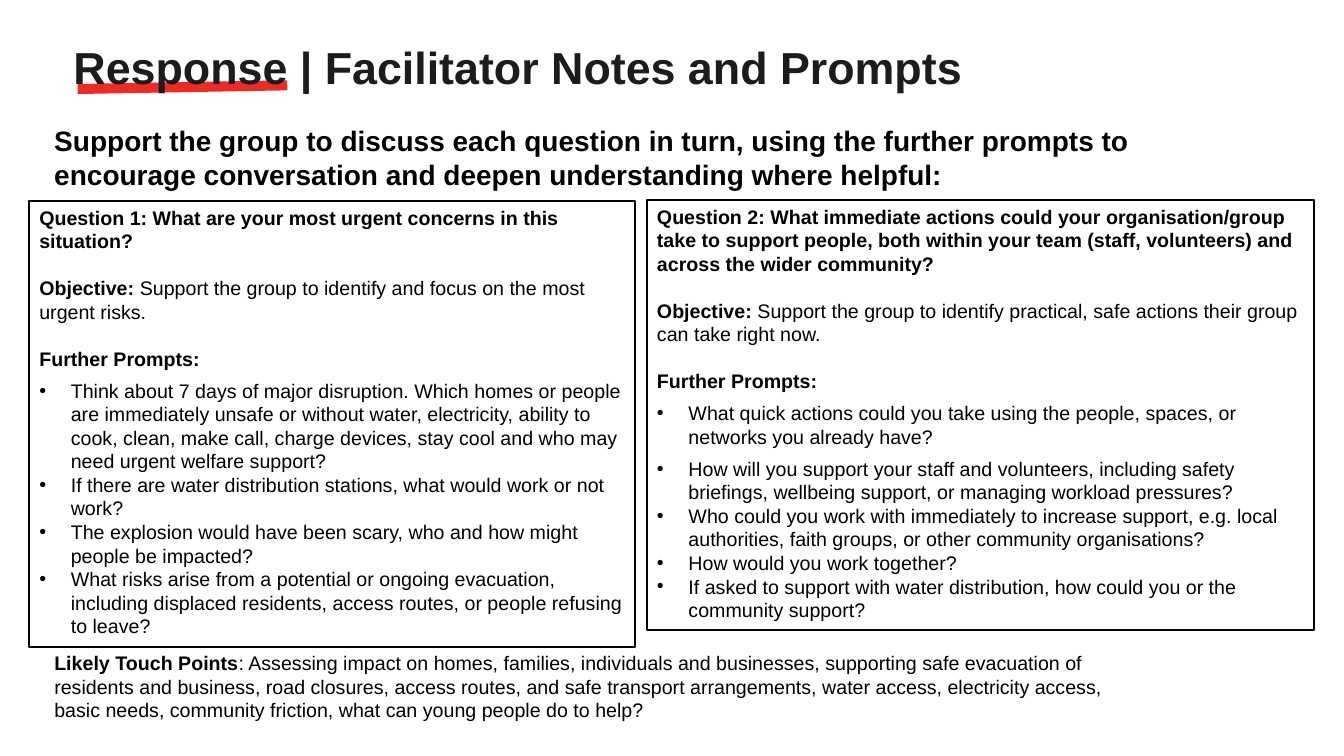
"""Build the Response facilitator notes slide."""
from lxml import etree
from pptx import Presentation
from pptx.dml.color import RGBColor
from pptx.enum.shapes import MSO_SHAPE
from pptx.enum.text import MSO_ANCHOR, PP_ALIGN
from pptx.oxml.ns import qn
from pptx.util import Pt

RECTANGLE = MSO_SHAPE.RECTANGLE
TOP = MSO_ANCHOR.TOP
LEFT = PP_ALIGN.LEFT
FONT = "Arial"
COLORS = {"text": "000000", "title": "1D1B1D", "accent": "EE2A24"}
BODY_SIZE = 14
BLANK_LINE = 16.8
PROMPT_GAP = 6
BULLET_INDENT = 22.5

QUESTIONS = [
    {
        "box": (21, 143.3, 432.7, 319),
        "question": "Question 1: What are your most urgent concerns in this situation?",
        "objective": "Support the group to identify and focus on the most urgent risks.",
        "prompts": [
            ("Think about 7 days of major disruption. Which homes or people are "
             "immediately unsafe or without water, electricity, ability to cook, clean, "
             "make call, charge devices, stay cool and who may need urgent welfare "
             "support?", 0),
            ("If there are water distribution stations, what would work or not work?", 0),
            ("The explosion would have been scary, who and how might people be "
             "impacted?", 0),
            ("What risks arise from a potential or ongoing evacuation, including "
             "displaced residents, access routes, or people refusing to leave?", 0),
        ],
    },
    {
        "box": (462.2, 142.6, 476.6, 307.4),
        "question": "Question 2: What immediate actions could your organisation/group take "
                    "to support people, both within your team (staff, volunteers) and "
                    "across the wider community?",
        "objective": "Support the group to identify practical, safe actions their group "
                     "can take right now.",
        "prompts": [
            ("What quick actions could you take using the people, spaces, or networks "
             "you already have?", PROMPT_GAP),
            ("How will you support your staff and volunteers, including safety "
             "briefings, wellbeing support, or managing workload pressures?", 0),
            ("Who could you work with immediately to increase support, e.g. local "
             "authorities, faith groups, or other community organisations?", 0),
            ("How would you work together?", 0),
            ("If asked to support with water distribution, how could you or the "
             "community support?", 0),
        ],
    },
]


def color(name):
    """Return the named colour."""
    return RGBColor.from_string(COLORS[name])


def add_text(paragraph, text, size=BODY_SIZE, bold=False, fill="text"):
    """Append one formatted run to a paragraph."""
    run = paragraph.add_run()
    run.text = text
    run.font.name = FONT
    run.font.size = Pt(size)
    run.font.bold = bold
    run.font.color.rgb = color(fill)


def add_paragraph(text_frame, first=False, after=0, bullet=False):
    """Start a left-aligned paragraph, bulleted if asked."""
    paragraph = text_frame.paragraphs[0] if first else text_frame.add_paragraph()
    paragraph.alignment = LEFT
    paragraph.space_after = Pt(after)
    if bullet:
        properties = paragraph._p.get_or_add_pPr()
        properties.set("marL", str(Pt(BULLET_INDENT)))
        properties.set("indent", str(-Pt(BULLET_INDENT)))
        etree.SubElement(properties, qn("a:buFont")).set("typeface", FONT)
        etree.SubElement(properties, qn("a:buChar")).set("char", "•")
    return paragraph


def add_text_box(slide, box):
    """Add a wrapping text box and return its first paragraph."""
    text_frame = slide.shapes.add_textbox(*map(Pt, box)).text_frame
    text_frame.word_wrap = True
    return add_paragraph(text_frame, first=True)


def add_question(slide, box, question, objective, prompts):
    """Add an outlined panel with a question, its objective and prompts."""
    shape = slide.shapes.add_shape(RECTANGLE, *map(Pt, box))
    shape.shadow.inherit = False
    shape.fill.background()
    shape.line.color.rgb = color("text")
    shape.line.width = Pt(1.5)
    text_frame = shape.text_frame
    text_frame.word_wrap = True
    text_frame.vertical_anchor = TOP
    add_text(add_paragraph(text_frame, first=True, after=BLANK_LINE), question, bold=True)
    paragraph = add_paragraph(text_frame, after=BLANK_LINE)
    add_text(paragraph, "Objective: ", bold=True)
    add_text(paragraph, objective)
    add_text(add_paragraph(text_frame, after=PROMPT_GAP), "Further Prompts:", bold=True)
    for prompt, after in prompts:
        add_text(add_paragraph(text_frame, after=after, bullet=True), prompt)


def add_underline(slide, box, rotation):
    """Add the slanted accent bar under the title."""
    bar = slide.shapes.add_shape(RECTANGLE, *map(Pt, box))
    bar.shadow.inherit = False
    bar.rotation = rotation
    bar.fill.solid()
    bar.fill.fore_color.rgb = color("accent")
    bar.line.fill.background()


def main():
    """Build and save the slide."""
    presentation = Presentation()
    presentation.slide_width = Pt(960)
    presentation.slide_height = Pt(540)
    slide = presentation.slides.add_slide(presentation.slide_layouts[6])
    for question in QUESTIONS:
        add_question(slide, **question)
    add_text(add_text_box(slide, (31.7, 85, 799.2, 55.4)),
             "Support the group to discuss each question in turn, using the further "
             "prompts to encourage conversation and deepen understanding where helpful:",
             size=20, bold=True)
    touch_points = add_text_box(slide, (31.7, 461.5, 786.2, 58.3))
    add_text(touch_points, "Likely Touch Points", bold=True)
    add_text(touch_points,
             ": Assessing impact on homes, families, individuals and businesses, "
             "supporting safe evacuation of residents and business, road closures, "
             "access routes, and safe transport arrangements, water access, electricity "
             "access, basic needs, community friction, what can young people do to help?")
    add_underline(slide, (55.4, 58.7, 149.8, 7.2), -1)
    add_text(add_text_box(slide, (45.4, 24.5, 911.5, 46.1)),
             "Response | Facilitator Notes and Prompts",
             size=32, bold=True, fill="title")
    presentation.save("out.pptx")


if __name__ == "__main__":
    main()
